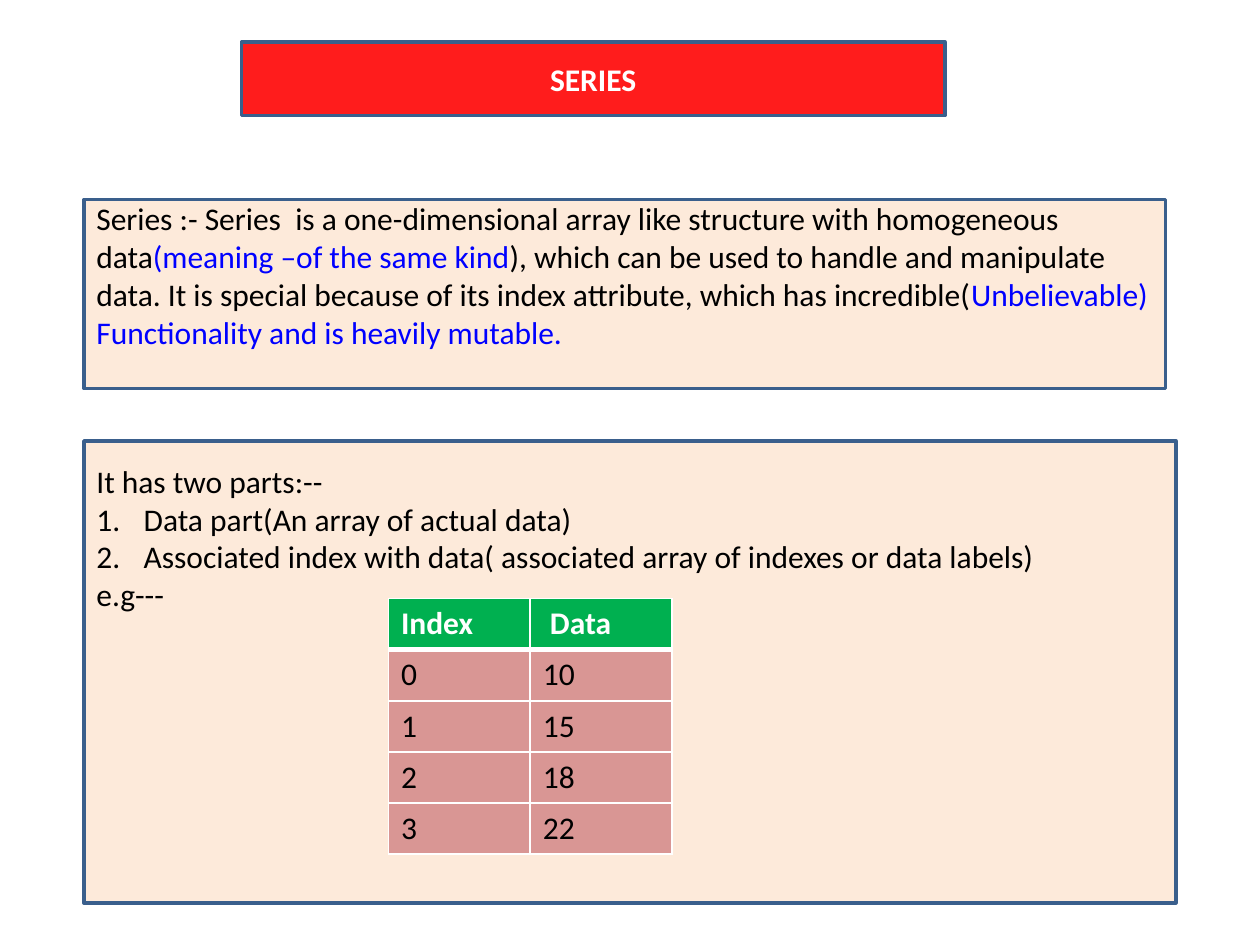
import pptx
import pptx.dml.color
import pptx.enum.shapes
import pptx.enum.text
import pptx.oxml
import pptx.oxml.ns
import pptx.util

RGB = pptx.dml.color.RGBColor
RED = RGB(0xFF, 0x00, 0x00)
NAVY = RGB(0x3A, 0x5F, 0x8C)
PEACH = RGB(0xFD, 0xEA, 0xDA)
GREEN = RGB(0x00, 0xB0, 0x50)
ROSE = RGB(0xD9, 0x96, 0x94)
BLUE = RGB(0x00, 0x00, 0xFF)
BLACK = RGB(0x00, 0x00, 0x00)
WHITE = RGB(0xFF, 0xFF, 0xFF)
PX = 9525
ALIGN = pptx.enum.text.PP_ALIGN


class Deck:
    """Style and current slide, with one method for each kind of element."""

    font = "Calibri"
    size = pptx.util.Pt(18)

    def __init__(self, slide):
        self.slide = slide

    def style(self, para, color, bold=False):
        for run in para.runs:
            run.font.name = self.font
            run.font.size = self.size
            run.font.bold = bold
            run.font.color.rgb = color

    def box(self, left, top, width, height, fill, lines, color=BLACK,
            bold=False, align=ALIGN.LEFT, foot=0):
        rect = pptx.enum.shapes.MSO_SHAPE.RECTANGLE
        shape = self.slide.shapes.add_shape(
            rect, left * PX, top * PX, width * PX, height * PX)
        shape.shadow.inherit = False
        shape.fill.solid()
        shape.fill.fore_color.rgb = fill
        shape.line.color.rgb = NAVY
        shape.line.width = pptx.util.Pt(2)
        frame = shape.text_frame
        frame.word_wrap = True
        frame.vertical_anchor = pptx.enum.text.MSO_ANCHOR.MIDDLE
        frame.margin_top = 0
        frame.margin_bottom = foot * PX
        frame.text = "\n".join(lines)
        for para in frame.paragraphs:
            para.alignment = align
            self.style(para, color, bold)
        return shape

    def fade(self, shape, share):
        tone = shape.fill._xPr.find(".//" + pptx.oxml.ns.qn("a:srgbClr"))
        alpha = pptx.oxml.parse_xml(
            f'<a:alpha {pptx.oxml.ns.nsdecls("a")} val="{share * 1000}"/>')
        tone.append(alpha)

    def tint(self, para, parts):
        para.text = ""
        for text, color in parts:
            run = para.add_run()
            run.text = text
            run.font.name = self.font
            run.font.size = self.size
            run.font.color.rgb = color

    def number(self, para, hang):
        props = para._p.get_or_add_pPr()
        props.set("marL", str(hang * PX))
        props.set("indent", str(-hang * PX))
        props.append(pptx.oxml.parse_xml(
            f'<a:buAutoNum {pptx.oxml.ns.nsdecls("a")} type="arabicPeriod"/>'))

    def edge(self, cell, side, width):
        cell._tc.get_or_add_tcPr().append(pptx.oxml.parse_xml(
            f'<a:ln{side} {pptx.oxml.ns.nsdecls("a")} w="{pptx.util.Pt(width)}">'
            f'<a:solidFill><a:srgbClr val="{WHITE}"/></a:solidFill></a:ln{side}>'))

    def table(self, left, top, wide, high, rows):
        cols = len(rows[0])
        grid = self.slide.shapes.add_table(
            len(rows), cols, left * PX, top * PX,
            wide * cols * PX, high * len(rows) * PX).table
        for i, row in enumerate(rows):
            head = i == 0
            for j, text in enumerate(row):
                cell = grid.cell(i, j)
                for side in "LRTB":
                    thick = (i, side) in ((0, "B"), (1, "T"))
                    self.edge(cell, side, 3 if thick else 1)
                cell.fill.solid()
                cell.fill.fore_color.rgb = GREEN if head else ROSE
                cell.text_frame.text = text
                self.style(cell.text_frame.paragraphs[0],
                           WHITE if head else BLACK, head)


def main():
    prs = pptx.Presentation()
    prs.slide_width = 960 * PX
    prs.slide_height = 720 * PX
    deck = Deck(prs.slides.add_slide(prs.slide_layouts[6]))

    title = deck.box(184, 32, 536, 56, RED, ["SERIES"], WHITE, True, ALIGN.CENTER)
    deck.fade(title, 89)

    parts = [
        ("Series :- Series  is a one-dimensional array like structure with "
         "homogeneous data", BLACK),
        ("(meaning –of the same kind", BLUE),
        ("), which can be used to handle and manipulate data. It is special "
         "because of its index attribute, which has incredible(", BLACK),
        ("Unbelievable)", BLUE),
    ]
    about = deck.box(64, 152, 824, 144, PEACH,
                     ["", "Functionality and is heavily mutable."], BLUE, foot=29)
    deck.tint(about.text_frame.paragraphs[0], parts)

    lines = [
        "It has two parts:--",
        "Data part(An array of actual data)",
        "Associated index with data( associated array of indexes or data labels)",
        "e.g---",
    ]
    body = deck.box(64, 336, 832, 352, PEACH, lines, foot=205)
    for para in body.text_frame.paragraphs[1:3]:
        deck.number(para, 36)

    rows = [("Index", " Data"), ("0", "10"), ("1", "15"), ("2", "18"), ("3", "22")]
    deck.table(296, 456, 108, 39, rows)
    prs.save("out.pptx")


if __name__ == "__main__":
    main()
